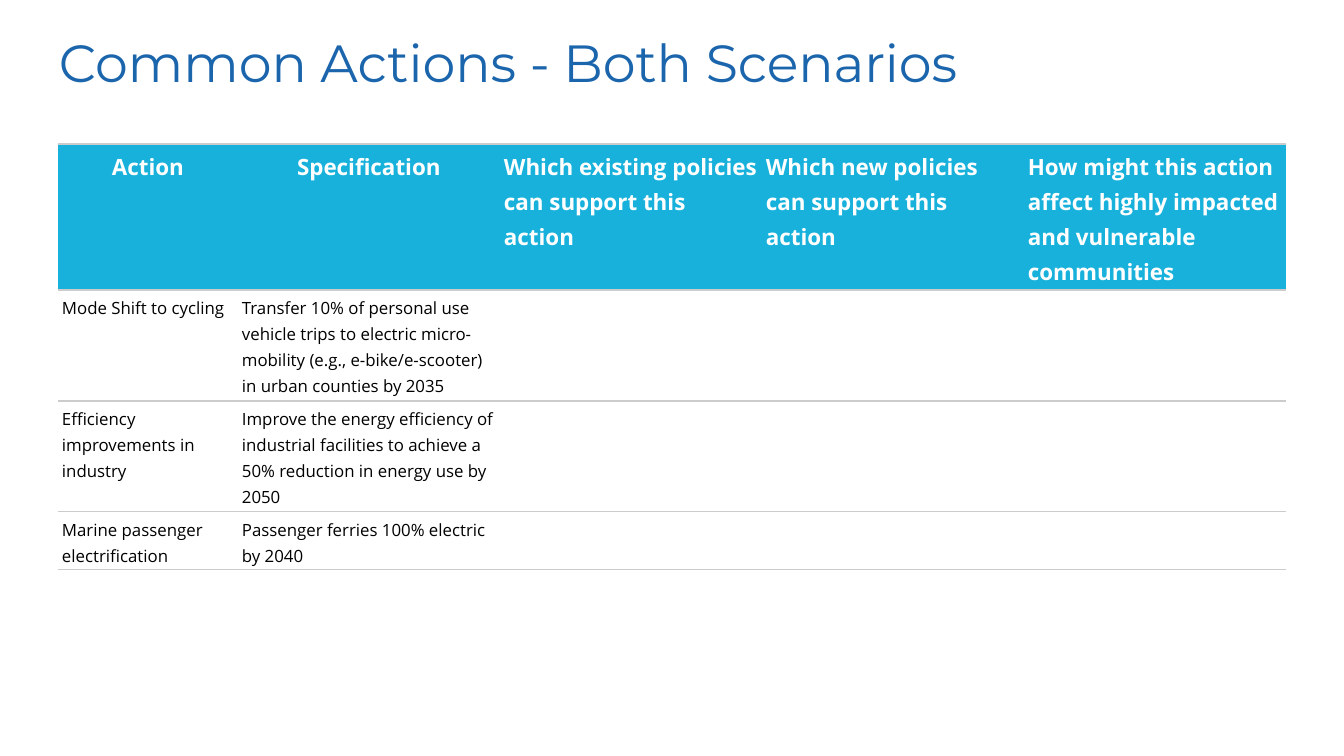
from dataclasses import dataclass

from lxml.etree import SubElement as add_element
from pptx import Presentation
from pptx.dml.color import RGBColor
from pptx.enum.text import MSO_ANCHOR as Anchor, PP_ALIGN as Align
from pptx.oxml.ns import qn
from pptx.util import Pt

EMU_PER_PX = 9144000 / 1344


@dataclass(frozen=True)
class Theme:
    title_font: str = "Montserrat"
    body_font: str = "Open Sans"
    title_color: str = "1B65AC"
    header_fill: str = "17B1DC"
    header_color: str = "FFFFFF"
    body_color: str = "000000"
    rule_color: str = "CCCCCC"
    title_size: int = 28
    header_size: int = 12
    body_size: int = 9
    rule_width: float = 0.75
    line_spacing: float = 1.15


THEME = Theme()

HEADERS = [
    "Action",
    "Specification",
    "Which existing policies can support this action",
    "Which new policies can support this action",
    "How might this action affect highly impacted and vulnerable communities",
]
ACTIONS = [
    ("Mode Shift to cycling",
     "Transfer 10% of personal use vehicle trips to electric micro-mobility "
     "(e.g., e-bike/e-scooter) in urban counties by 2035"),
    ("Efficiency improvements in industry",
     "Improve the energy efficiency of industrial facilities to achieve "
     "a 50% reduction in energy use by 2050"),
    ("Marine passenger electrification",
     "Passenger ferries 100% electric by 2040"),
]
COLUMN_WIDTHS = [180] + [262] * 4
ROW_HEIGHTS = [146, 111, 111, 58]
CENTERED_COLUMNS = 2


def px(length):
    return round(length * EMU_PER_PX)


def write_text(frame, text, *, font, size, color, bold=False,
               align=Align.LEFT, spacing=1.0):
    para = frame.paragraphs[0]
    para.alignment = align
    para.line_spacing = spacing
    span = para.add_run()
    span.text = text
    span.font.name = font
    span.font.size = Pt(size)
    span.font.bold = bold
    span.font.color.rgb = RGBColor.from_string(color)


def add_title(page, text):
    box = page.shapes.add_textbox(px(46), px(17), px(1228), px(85))
    frame = box.text_frame
    frame.word_wrap = True
    frame.vertical_anchor = Anchor.TOP
    frame.margin_left = frame.margin_right = px(13)
    frame.margin_top = frame.margin_bottom = px(13)
    write_text(frame, text, font=THEME.title_font, size=THEME.title_size,
               color=THEME.title_color)


def add_borders(cell):
    properties = cell._tc.get_or_add_tcPr()
    for side in ("lnL", "lnR"):
        add_element(add_element(properties, qn(f"a:{side}")), qn("a:noFill"))
    for side in ("lnT", "lnB"):
        line = add_element(properties, qn(f"a:{side}"), w=str(Pt(THEME.rule_width)))
        fill = add_element(line, qn("a:solidFill"))
        add_element(fill, qn("a:srgbClr"), val=THEME.rule_color)


def format_cell(cell, fill_color=None):
    cell.margin_left = cell.margin_right = px(4)
    cell.margin_top = cell.margin_bottom = px(3)
    cell.vertical_anchor = Anchor.TOP
    add_borders(cell)
    if fill_color:
        cell.fill.solid()
        cell.fill.fore_color.rgb = RGBColor.from_string(fill_color)
    else:
        cell.fill.background()


def add_action_table(page):
    table = page.shapes.add_table(
        len(ROW_HEIGHTS), len(COLUMN_WIDTHS), px(58), px(144),
        px(sum(COLUMN_WIDTHS)), px(sum(ROW_HEIGHTS))).table
    table.horz_banding = False
    for column, width in zip(table.columns, COLUMN_WIDTHS):
        column.width = px(width)
    for row, height in zip(table.rows, ROW_HEIGHTS):
        row.height = px(height)
    for index, text in enumerate(HEADERS):
        cell = table.cell(0, index)
        format_cell(cell, THEME.header_fill)
        align = Align.CENTER if index < CENTERED_COLUMNS else Align.LEFT
        write_text(cell.text_frame, text, font=THEME.body_font,
                   size=THEME.header_size, color=THEME.header_color,
                   bold=True, align=align, spacing=THEME.line_spacing)
    for row_index, action in enumerate(ACTIONS, start=1):
        for index in range(len(HEADERS)):
            cell = table.cell(row_index, index)
            format_cell(cell)
            if index < len(action):
                write_text(cell.text_frame, action[index], font=THEME.body_font,
                           size=THEME.body_size, color=THEME.body_color,
                           spacing=THEME.line_spacing)


def main():
    deck = Presentation()
    deck.slide_width, deck.slide_height = px(1344), px(756)
    page = deck.slides.add_slide(deck.slide_layouts[6])
    add_title(page, "Common Actions - Both Scenarios")
    add_action_table(page)
    deck.save("out.pptx")


if __name__ == "__main__":
    main()
